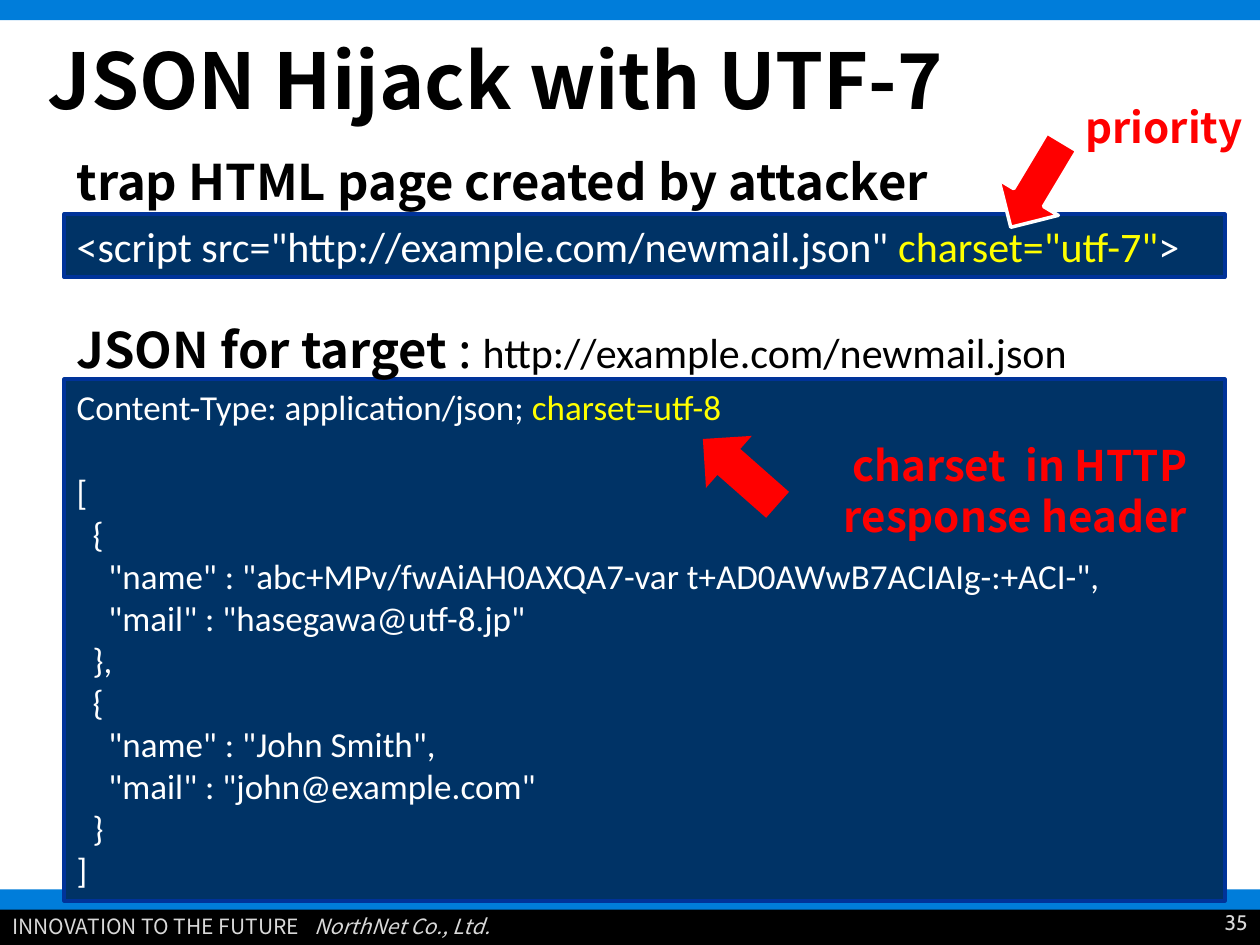
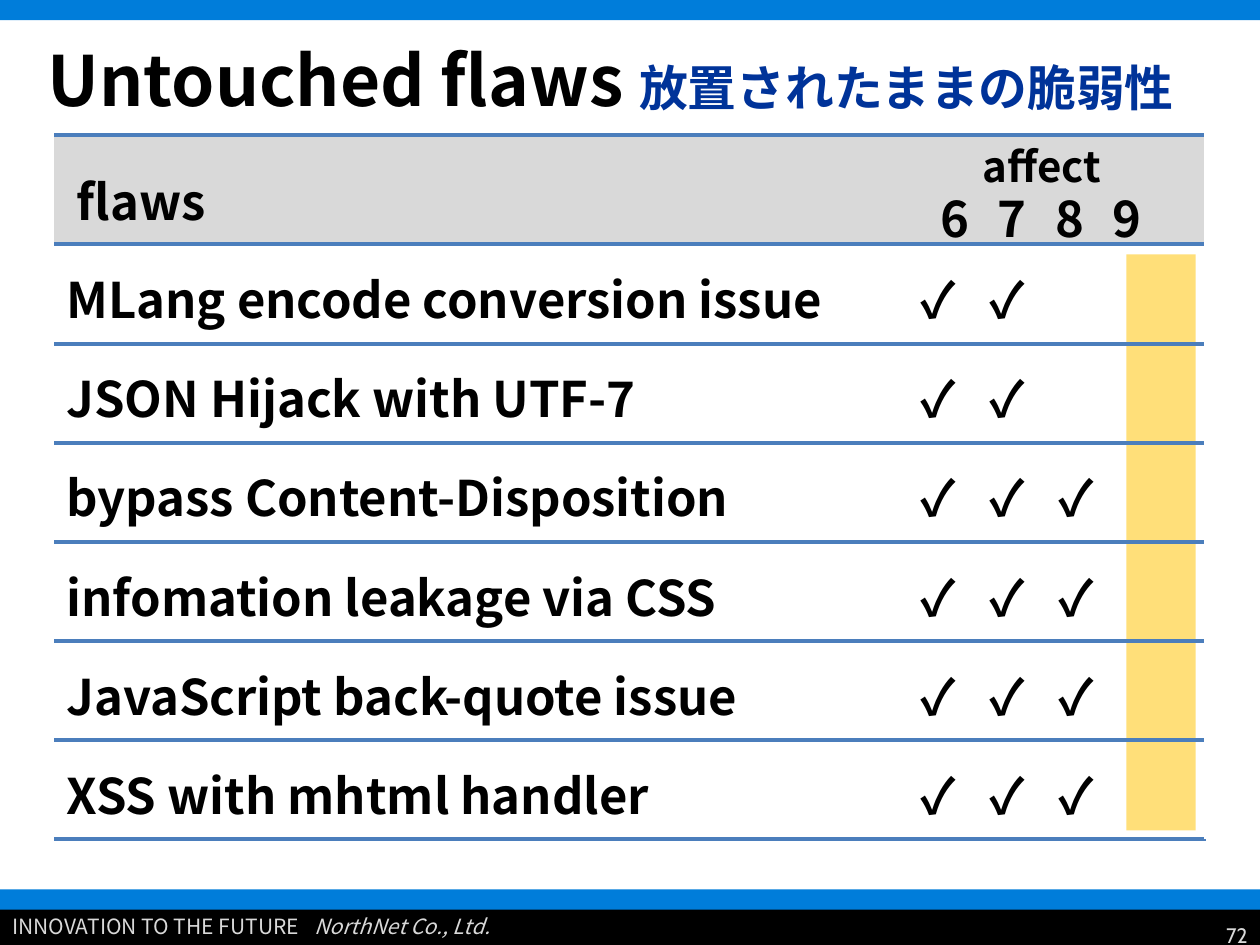
import pptx
import pptx.util
import pptx.dml.color
import pptx.enum.shapes
import pptx.enum.text
import pptx.oxml.ns
import lxml.etree
from dataclasses import dataclass

SHAPES = pptx.enum.shapes.MSO_SHAPE
ALIGN = pptx.enum.text.PP_ALIGN
ANCHOR = pptx.enum.text.MSO_ANCHOR
COLUMNS, ROWS = 100, 75  # the grid that every length is given in


@dataclass(frozen=True)
class Theme:
    heading_font: str = "Noto Sans CJK JP"
    code_font: str = "Calibri"
    number_font: str = "Cabin"
    black: str = "000000"
    white: str = "FFFFFF"
    band: str = "007DDA"
    grey: str = "D9D9D9"
    navy: str = "003366"
    navy_edge: str = "003399"
    yellow: str = "FFFF00"
    red: str = "FF0000"
    rule: str = "4B7EBC"
    column_tint: str = "FFDF79"
    title: float = 44
    title_small: float = 39.6
    title_note: float = 27.9
    heading: float = 28
    label: float = 24
    code: float = 20
    footer: float = 12
    line: float = 2.25


THEME = Theme()
TITLE = dict(name=THEME.heading_font, size=THEME.title, bold=True, color=THEME.black)
HEADING = TITLE | dict(size=THEME.heading)
LABEL = TITLE | dict(size=THEME.label)
CALLOUT = LABEL | dict(color=THEME.red)
URL = dict(name=THEME.code_font, size=THEME.label, color=THEME.black)
TAG = URL | dict(color=THEME.white)
CODE = TAG | dict(size=THEME.code)
MARKED = dict(color=THEME.yellow)
FOOTER = dict(name=THEME.heading_font, size=THEME.footer, color=THEME.grey)
NUMBER = FOOTER | dict(name=THEME.number_font)


def rgb(code):
    return pptx.dml.color.RGBColor.from_string(code)


def add_xml(parent, tag, **attributes):
    return lxml.etree.SubElement(parent, pptx.oxml.ns.qn(tag), attributes)


class Deck:
    """Holds the theme and the current slide, and draws on its grid."""

    def __init__(self, theme):
        self.theme = theme
        self.file = pptx.Presentation()
        self.file.slide_width = pptx.util.Inches(10)
        self.file.slide_height = pptx.util.Inches(7.5)
        self.slide = None

    def x(self, columns):
        return round(self.file.slide_width * columns / COLUMNS)

    def y(self, rows):
        return round(self.file.slide_height * rows / ROWS)

    def place(self, left, top, width, height):
        return self.x(left), self.y(top), self.x(width), self.y(height)

    def start(self, number, number_top):
        """New slide with the shared bands, footer and page number."""
        self.slide = self.file.slides.add_slide(self.file.slide_layouts[6])
        self.box((0, 0, 100, 1.6), self.theme.band)
        self.box((0, 71.4, 100, 3.6), self.theme.black)
        motto = [("INNOVATION TO THE FUTURE\t", FOOTER),
                 ("NorthNet Co., Ltd.", FOOTER | dict(italic=True))]
        self.text((0, 72, 73.2, 3), [motto], tabs=("l", [24]))
        self.box((0, 70.6, 100, 1.6), self.theme.band)
        self.text((76.7, number_top, 23.3, 3.6), [[(number, NUMBER)]],
                  align=ALIGN.RIGHT, anchor=ANCHOR.MIDDLE)

    def title(self, width, *runs):
        self.text((2.8, 0, width, 12.5), [runs], anchor=ANCHOR.MIDDLE)

    def box(self, area, fill, edge=None, kind=SHAPES.RECTANGLE, turn=0, weight=None):
        shape = self.slide.shapes.add_shape(kind, *self.place(*area))
        shape.shadow.inherit = False
        shape.rotation = turn
        shape.fill.solid()
        shape.fill.fore_color.rgb = rgb(fill)
        if edge:
            shape.line.color.rgb = rgb(edge)
            shape.line.width = pptx.util.Pt(weight or self.theme.line)
        else:
            shape.line.fill.background()
        return shape

    def code_box(self, area, paragraphs):
        panel = self.box(area, self.theme.navy, self.theme.navy_edge)
        return self.fill_text(panel.text_frame, paragraphs)

    def arrow(self, left, top, turn, edge=None):
        self.box((left, top, 7.9, 5.5), self.theme.red, edge,
                 SHAPES.RIGHT_ARROW, turn, weight=2)

    def text(self, area, paragraphs, **layout):
        frame = self.slide.shapes.add_textbox(*self.place(*area)).text_frame
        return self.fill_text(frame, paragraphs, **layout)

    def fill_text(self, frame, paragraphs, align=ALIGN.LEFT, anchor=ANCHOR.TOP, tabs=None):
        """Fill a frame; each paragraph is a list of (words, format)."""
        frame.word_wrap = True
        frame.vertical_anchor = anchor
        for index, runs in enumerate(paragraphs):
            paragraph = frame.add_paragraph() if index else frame.paragraphs[0]
            paragraph.alignment = align
            if tabs:
                kind, stops = tabs
                stop_list = add_xml(paragraph._p.get_or_add_pPr(), "a:tabLst")
                for stop in stops:
                    add_xml(stop_list, "a:tab", pos=str(self.x(stop)), algn=kind)
            for words, style in runs:
                self.add_words(paragraph, words, style)
        return frame

    def add_words(self, paragraph, words, style):
        run = paragraph.add_run()
        run.text = words
        values = dict(style)
        run.font.color.rgb = rgb(values.pop("color"))
        values["size"] = pptx.util.Pt(values["size"])
        for attribute, value in values.items():
            setattr(run.font, attribute, value)
        add_xml(run._r.get_or_add_rPr(), "a:ea", typeface=style["name"])

    def line(self, start, end, color):
        rule = self.slide.shapes.add_connector(
            pptx.enum.shapes.MSO_CONNECTOR.STRAIGHT,
            self.x(start[0]), self.y(start[1]), self.x(end[0]), self.y(end[1]))
        rule.line.color.rgb = rgb(color)
        rule.line.width = pptx.util.Pt(self.theme.line)
        add_xml(rule._element.spPr, "a:effectLst")


def json_hijack(deck):
    deck.start("35", 71.4)
    deck.title(90, ("JSON Hijack with UTF-7", TITLE))
    left, width = 5.1, 92.1

    # Response of the target: header, then the body by indent level
    header = [("Content-Type: application/json; ", CODE), ("charset=utf-8", CODE | MARKED)]
    body = [
        (0, "["),
        (1, "{"),
        (2, '"name" : "abc+MPv/fwAiAH0AXQA7-var t+AD0AWwB7ACIAIg-:+ACI-",'),
        (2, '"mail" : "hasegawa@utf-8.jp"'),
        (1, "},"),
        (1, "{"),
        (2, '"name" : "John Smith",'),
        (2, '"mail" : "john@example.com"'),
        (1, "}"),
        (0, "]"),
    ]
    response = deck.code_box((left, 30.1, width, 41.4),
                             [header] + [[(words, CODE)] for _, words in body])
    response.paragraphs[0].space_after = pptx.util.Pt(24.4)
    for paragraph, (level, _) in zip(response.paragraphs[1:], body):
        paragraph._p.get_or_add_pPr().set("marL", str(deck.x(1.26 * level)))

    # Headings and the trap page
    deck.text((left, 24.9, width, 5.7), [[
        ("JSON for target ", HEADING), (": ", HEADING | dict(bold=False)),
        ("http://example.com/newmail.json", URL)]])
    deck.text((left, 11.5, width, 5.7), [[("trap HTML page created by attacker", HEADING)]])
    deck.code_box((left, 17, width, 5), [[
        ('<script src="http://example.com/newmail.json" ', TAG),
        ('charset="utf-7"', TAG | MARKED), (">", TAG)]])

    # Callouts with their arrows
    deck.text((53.1, 34.4, 42.1, 9.1),
              [[("charset  in HTTP", CALLOUT)], [("response header", CALLOUT)]],
              align=ALIGN.RIGHT)
    deck.arrow(54.8, 34.7, 221.4)
    deck.arrow(78.3, 11.9, 120.9, THEME.white)
    deck.text((77.1, 7.6, 22.5, 5), [[("priority", CALLOUT)]], align=ALIGN.RIGHT)


def untouched_flaws(deck):
    flaws = [  # name and number of affected versions, from 6 up
        ("MLang encode conversion issue", 2),
        ("JSON Hijack with UTF-7", 2),
        ("bypass Content-Disposition", 3),
        ("infomation leakage via CSS", 3),
        ("JavaScript back-quote issue", 3),
        ("XSS with mhtml handler", 3),
    ]
    left, right = 4.3, 95.7
    head_top, body_top, pitch = 10.7, 19.4, 7.87
    first_version, version_step = 70.5, 5.5

    # Tinted column, header band and title
    deck.start("72", 72.4)
    deck.box((89.4, 20.2, 5.5, 45.7), THEME.column_tint)
    deck.box((left, head_top, right - left, body_top - head_top), THEME.grey)
    deck.title(97.2, ("Untouched flaws ", TITLE | dict(size=THEME.title_small)),
               ("放置されたままの脆弱性",
                TITLE | dict(size=THEME.title_note, color=THEME.navy_edge)))

    # Header words
    deck.text((5.1, 13.1, 31.5, 5.7), [[("flaws", HEADING)]])
    deck.text((first_version, head_top, 24.4, 5), [[("affect", LABEL)]], align=ALIGN.CENTER)
    deck.text((first_version, 14.5, 24.4, 5.7), [[("\t6\t7\t8\t9", HEADING)]],
              tabs=("ctr", [4.3 + 4.55 * step for step in range(4)]))

    # Rules, with the white one that trims their right ends
    rules = [head_top] + [body_top + pitch * row for row in range(len(flaws) + 1)]
    for height in rules:
        deck.line((left, height), (right, height), THEME.rule)
    deck.line((right, 9.2), (right, rules[-1]), THEME.white)

    # Flaws and their check marks
    for row, (flaw, affected) in enumerate(flaws):
        top = body_top + 1.5 + pitch * row
        deck.text((left, top, 74, 5.7), [[(flaw, HEADING)]])
        for version in range(affected):
            deck.text((first_version + version_step * version, top, 7.9, 5.7),
                      [[("✓", HEADING)]], align=ALIGN.CENTER)


def main():
    deck = Deck(THEME)
    json_hijack(deck)
    untouched_flaws(deck)
    deck.file.save("out.pptx")


if __name__ == "__main__":
    main()
